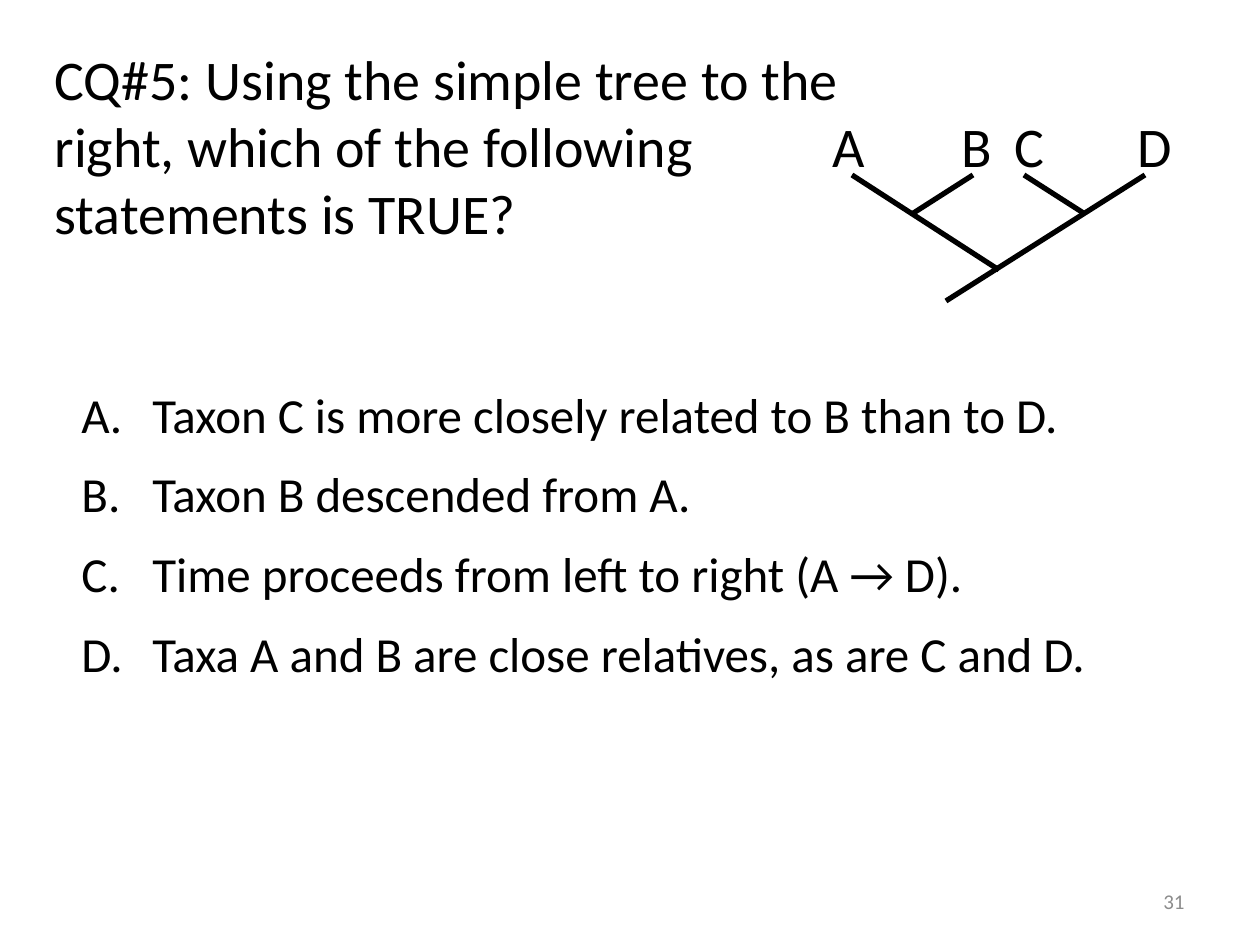
"""Builds a quiz slide with a question, a small phylogenetic tree and four answers."""
import dataclasses

import lxml.etree
import pptx
import pptx.dml.color
import pptx.enum.shapes
import pptx.enum.text
import pptx.oxml.ns
import pptx.util

EMU_PER_PX = 914400 // 126
ALIGN = pptx.enum.text.PP_ALIGN
ANCHOR = pptx.enum.text.MSO_ANCHOR


def px(length):
    return pptx.util.Emu(length * EMU_PER_PX)


@dataclasses.dataclass(frozen=True)
class Theme:
    font: str = "Calibri"
    ink: str = "000000"
    muted: str = "8C8C8C"
    question_size: int = 32
    answer_size: int = 28
    number_size: int = 12
    branch_width: int = 3
    answer_gap: int = 12
    answer_indent: int = 71


class QuizPage:
    def __init__(self, deck, theme):
        self.theme = theme
        self.page = deck.slides.add_slide(deck.slide_layouts[5])

    def style(self, para, size, color):
        para.font.name = self.theme.font
        para.font.size = pptx.util.Pt(size)
        para.font.color.rgb = pptx.dml.color.RGBColor.from_string(color)

    def title(self, text, left, top, width, height):
        box = self.page.shapes.title
        box.left, box.top, box.width, box.height = map(px, (left, top, width, height))
        frame = box.text_frame
        frame.text = text
        frame.word_wrap = True
        frame.auto_size = pptx.enum.text.MSO_AUTO_SIZE.NONE
        frame.vertical_anchor = ANCHOR.TOP
        frame.paragraphs[0].alignment = ALIGN.LEFT
        self.style(frame.paragraphs[0], self.theme.question_size, self.theme.ink)

    def text(self, text, left, top, width, height, size, color=None,
             align=ALIGN.LEFT, anchor=ANCHOR.TOP, wrap=True):
        box = self.page.shapes.add_textbox(*map(px, (left, top, width, height)))
        frame = box.text_frame
        frame.text = text
        frame.word_wrap = wrap
        frame.vertical_anchor = anchor
        for para in frame.paragraphs:
            para.alignment = align
            self.style(para, size, color or self.theme.ink)
        return box

    def answers(self, choices, left, top, width, height):
        box = self.text("\n".join(choices), left, top, width, height, self.theme.answer_size)
        indent = px(self.theme.answer_indent)
        for para in box.text_frame.paragraphs:
            para.space_before = pptx.util.Pt(self.theme.answer_gap)
            properties = para._p.get_or_add_pPr()
            properties.set("marL", str(indent))
            properties.set("indent", str(-indent))
            letter = lxml.etree.Element(pptx.oxml.ns.qn("a:buAutoNum"), type="alphaUcPeriod")
            properties.find(pptx.oxml.ns.qn("a:defRPr")).addprevious(letter)

    def branch(self, start, end):
        line = self.page.shapes.add_connector(
            pptx.enum.shapes.MSO_CONNECTOR.STRAIGHT, *map(px, start + end))
        line.line.width = pptx.util.Pt(self.theme.branch_width)
        line.line.color.rgb = pptx.dml.color.RGBColor.from_string(self.theme.ink)
        lxml.etree.SubElement(line._element.spPr, pptx.oxml.ns.qn("a:effectLst"))

    def tree(self):
        tip_y, node_y = 175, 214
        self.branch((946, 301), (1145, tip_y))
        self.branch((999, 270), (852, tip_y))
        self.branch((912, node_y), (973, tip_y))
        self.branch((1085, node_y), (1024, tip_y))
        for taxon, left in zip("ABCD", (820, 949, 1002, 1125)):
            self.text(taxon, left, 105, 71, 81, self.theme.question_size, wrap=False)

    def number(self, text, left, top, width, height):
        self.text(text, left, top, width, height, self.theme.number_size,
                  self.theme.muted, ALIGN.RIGHT, ANCHOR.MIDDLE)


def main():
    deck = pptx.Presentation()
    deck.slide_width, deck.slide_height = px(1260), px(945)
    quiz = QuizPage(deck, Theme())
    quiz.title("CQ#5: Using the simple tree to the right, which of the following "
               "statements is TRUE?", 42, 38, 829, 217)
    quiz.answers((
        "Taxon C is more closely related to B than to D.",
        "Taxon B descended from A.",
        "Time proceeds from left to right (A → D).",
        "Taxa A and B are close relatives, as are C and D.",
    ), 69, 378, 1144, 314)
    quiz.tree()
    quiz.number("31", 903, 876, 294, 50)
    deck.save("out.pptx")


if __name__ == "__main__":
    main()
